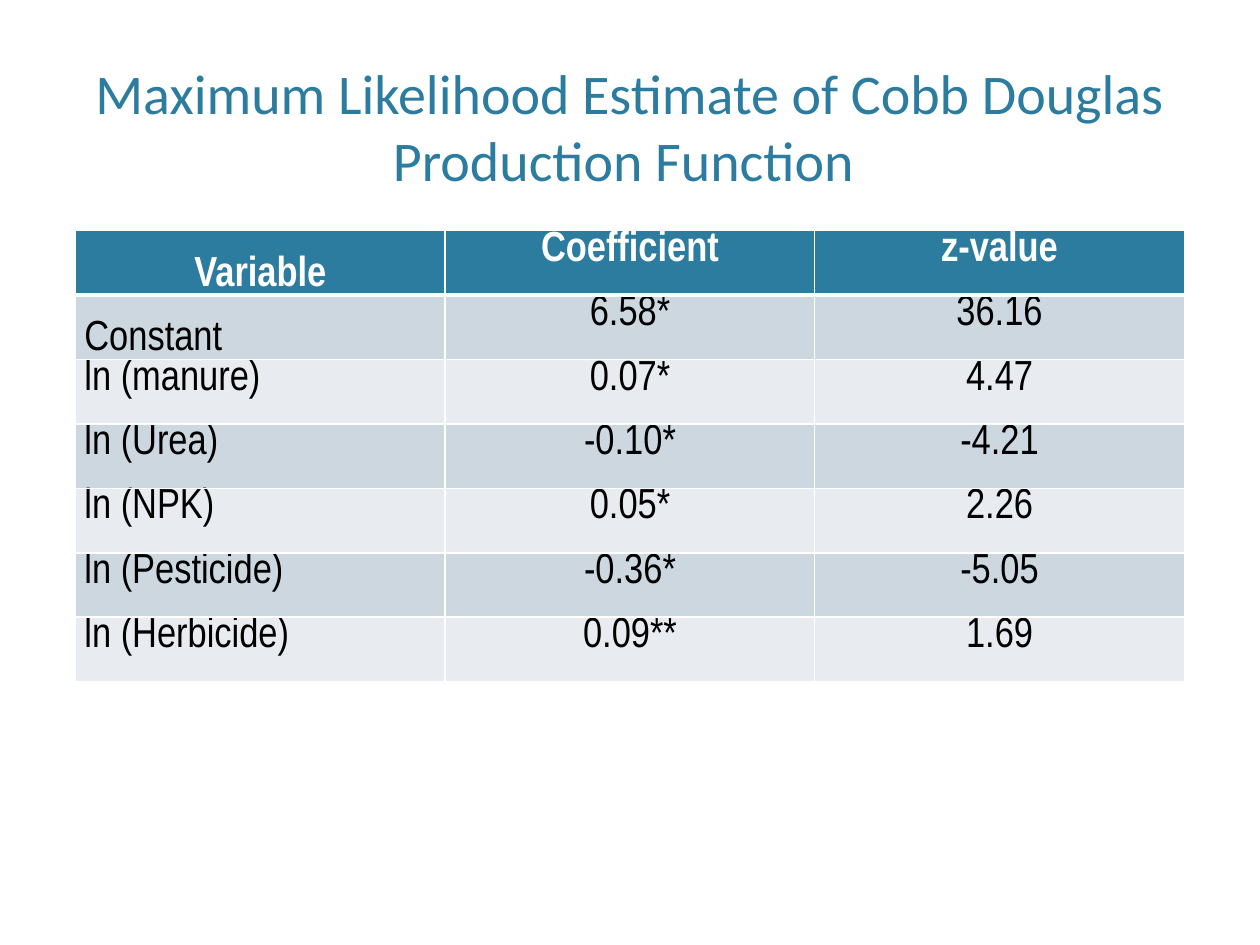
from pptx import Presentation
from pptx.dml.color import RGBColor
from pptx.enum import text as t
from pptx.oxml import parse_xml
from pptx.oxml.ns import nsdecls
from pptx.util import Inches, Pt

TEAL, WHITE, BLACK = "2C7C9F", "FFFFFF", "000000"
BANDS = ["CDD7DF", "E8ECF0"]
ROWS = [
    ("Variable", "Coefficient", "z-value"),
    ("Constant", "6.58*", "36.16"),
    ("ln (manure)", "0.07*", "4.47"),
    ("ln (Urea)", "-0.10*", "-4.21"),
    ("ln (NPK)", "0.05*", "2.26"),
    ("ln (Pesticide)", "-0.36*", "-5.05"),
    ("ln (Herbicide)", "0.09**", "1.69"),
]


def color(code):
    return RGBColor.from_string(code)


def write(frame, words, font, size, code, bold=False, center=True):
    frame.text = words
    par = frame.paragraphs[0]
    par.alignment = t.PP_ALIGN.CENTER if center else t.PP_ALIGN.LEFT
    par.line_spacing = 1.0
    face = par.runs[0].font
    face.name, face.size, face.bold = font, Pt(size), bold
    face.color.rgb = color(code)


def border(cell, side, width):
    line = parse_xml(
        f'<a:{side} {nsdecls("a")} w="{Pt(width)}"><a:solidFill>'
        f'<a:srgbClr val="{WHITE}"/></a:solidFill></a:{side}>')
    cell._tc.get_or_add_tcPr().append(line)


def add_title(slide):
    box = slide.shapes.add_textbox(
        Inches(0.6), Inches(0.31), Inches(8.8), Inches(1.27))
    frame = box.text_frame
    frame.word_wrap = True
    frame.vertical_anchor = t.MSO_ANCHOR.BOTTOM
    write(frame, "Maximum Likelihood Estimate of Cobb Douglas "
          "Production Function ", "Calibri", 32, TEAL)


def style(cell, words, row, col):
    head = row == 0
    # Borders come before the fill in the cell properties
    for side in ("lnL", "lnR", "lnT", "lnB"):
        heavy = (head and side == "lnB") or (row == 1 and side == "lnT")
        border(cell, side, 3 if heavy else 1)
    cell.fill.solid()
    cell.fill.fore_color.rgb = color(TEAL if head else BANDS[(row - 1) % 2])
    cell.margin_left = cell.margin_right = Inches(0.07)
    cell.margin_top = cell.margin_bottom = 0
    low = col == 0 and row < 2
    cell.vertical_anchor = t.MSO_ANCHOR.BOTTOM if low else t.MSO_ANCHOR.TOP
    write(cell.text_frame, words, "Arial Narrow", 24,
          WHITE if head else BLACK, head, head or col > 0)


def add_grid(slide):
    grid = slide.shapes.add_table(
        len(ROWS), len(ROWS[0]), Inches(0.6), Inches(1.83),
        Inches(8.8), Inches(3.58)).table
    for row, line in enumerate(ROWS):
        for col, words in enumerate(line):
            style(grid.cell(row, col), words, row, col)


def main():
    deck = Presentation()
    deck.slide_width, deck.slide_height = Inches(10), Inches(7.5)
    slide = deck.slides.add_slide(deck.slide_layouts[6])
    add_title(slide)
    add_grid(slide)
    deck.save("out.pptx")


if __name__ == "__main__":
    main()
